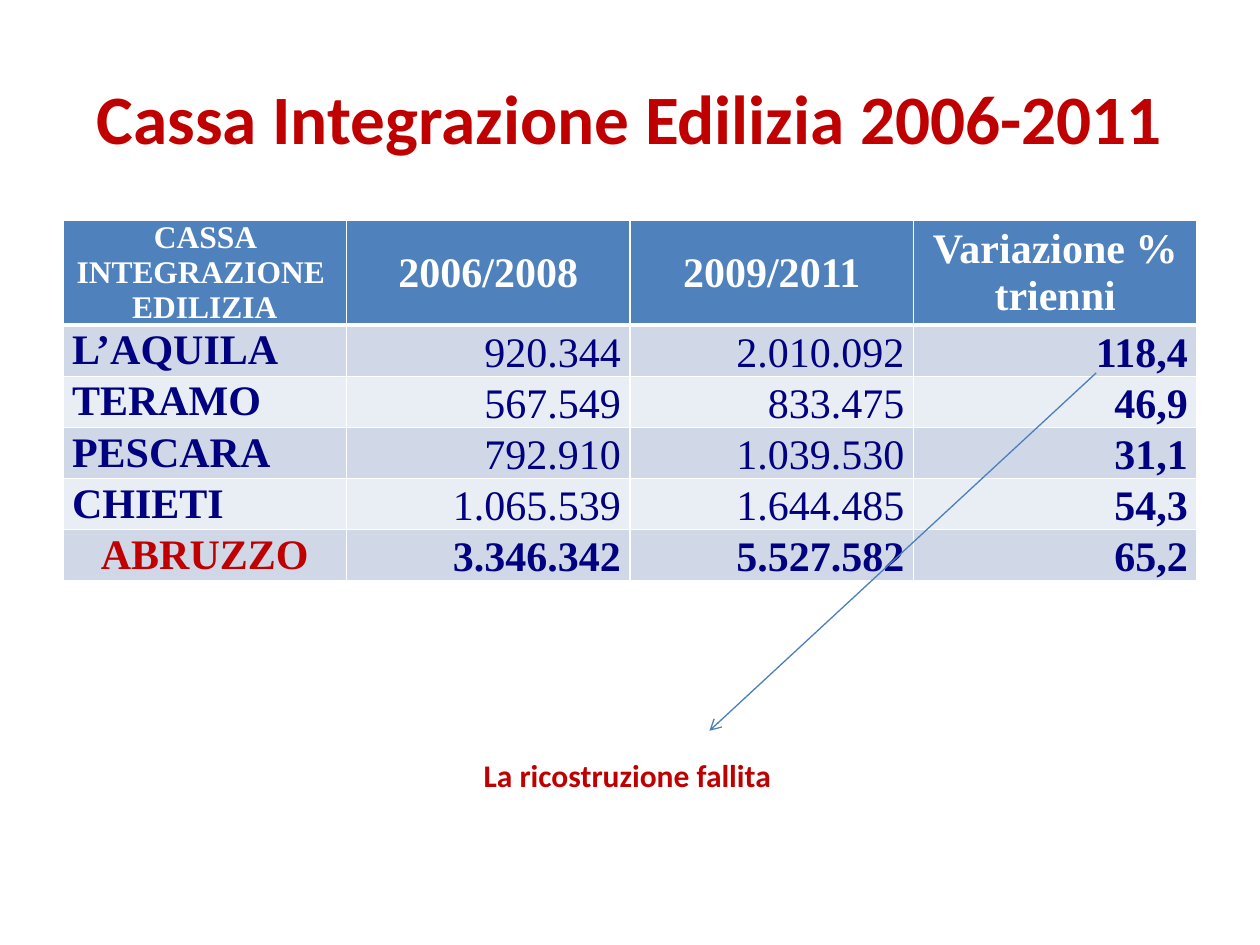
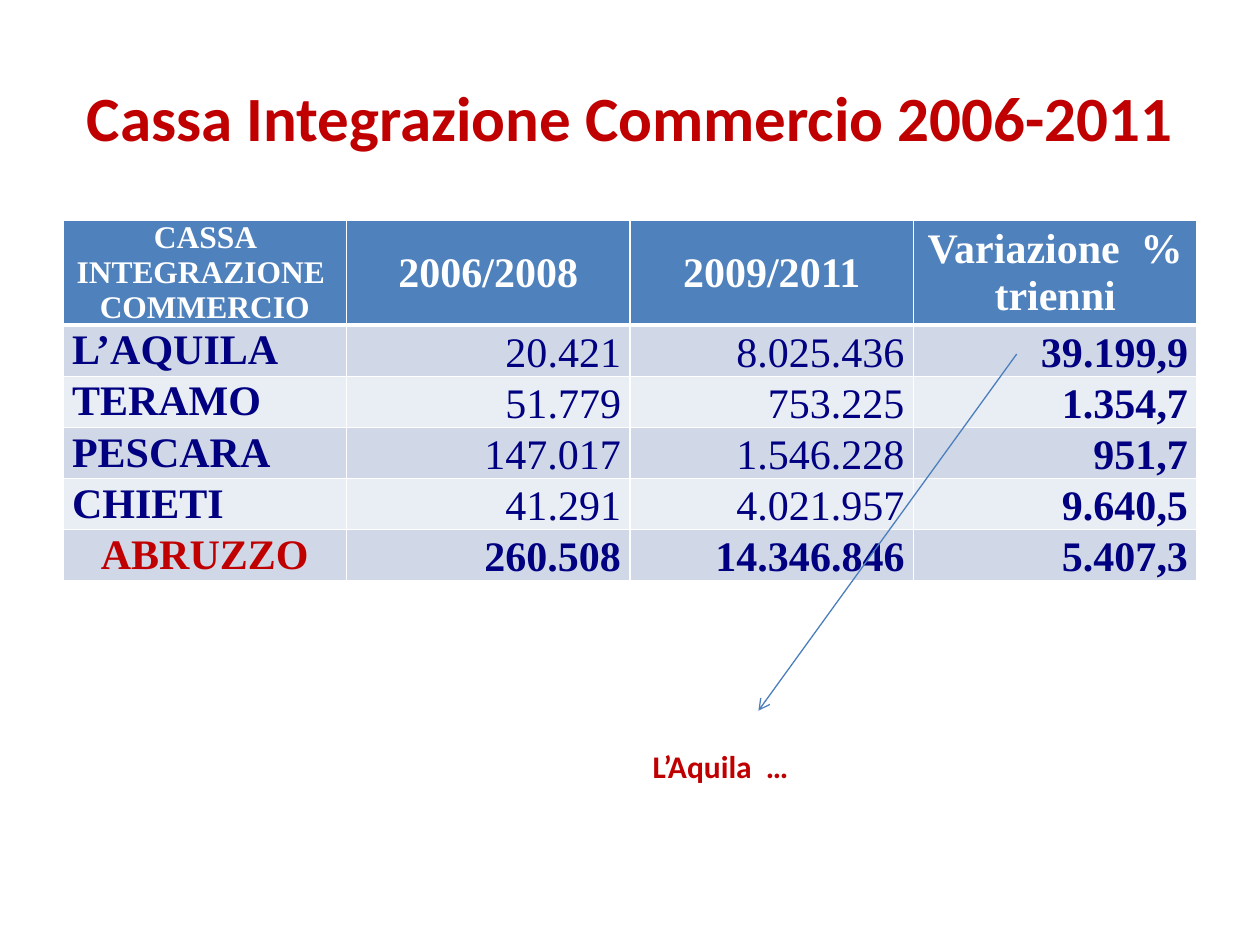
from lxml import etree
from pptx import Presentation
from pptx.dml.color import RGBColor
from pptx.enum import shapes, text
from pptx.oxml import ns
from pptx.util import Pt

RED = RGBColor(0xC0, 0x00, 0x00)
NAVY = RGBColor(0x00, 0x00, 0x80)
WHITE = RGBColor(0xFF, 0xFF, 0xFF)
HEAD = RGBColor(0x4F, 0x81, 0xBD)
BANDS = RGBColor(0xD0, 0xD8, 0xE8), RGBColor(0xE9, 0xED, 0xF4)
LINE = RGBColor(0x4B, 0x7E, 0xBC)
SANS, SERIF = "Calibri", "Times New Roman"

# Content; places are in points
AREAS = ["L’AQUILA", "TERAMO", "PESCARA", "CHIETI", "ABRUZZO"]
SLIDES = [
    {"title": "Cassa Integrazione Edilizia 2006-2011", "size": 39.6,
     "head": ["CASSA INTEGRAZIONE \nEDILIZIA", "2006/2008", "2009/2011",
              "Variazione % trienni"],
     "data": [("920.344", "2.010.092", "118,4"),
              ("567.549", "833.475", "46,9"),
              ("792.910", "1.039.530", "31,1"),
              ("1.065.539", "1.644.485", "54,3"),
              ("3.346.342", "5.527.582", "65,2")],
     "arrow": (626.4, 213.1, 405.4, 417.6),
     "note": "La ricostruzione fallita", "box": (269.3, 428.4, 300.2, 29)},
    {"title": "Cassa Integrazione Commercio 2006-2011", "size": 36,
     "head": ["CASSA INTEGRAZIONE \nCOMMERCIO", "2006/2008", "2009/2011",
              "Variazione  %\ntrienni"],
     "data": [("20.421", "8.025.436", "39.199,9"),
              ("51.779", "753.225", "1.354,7"),
              ("147.017", "1.546.228", "951,7"),
              ("41.291", "4.021.957", "9.640,5"),
              ("260.508", "14.346.846", "5.407,3")],
     "arrow": (581, 202.3, 433.4, 406.1),
     "note": "L’Aquila  …", "box": (365.8, 423.4, 238.3, 29)},
]

# Shared layout
TITLE = (36, 21.6, 648, 90)
LEFT, TOP, COL = 36, 126, 162
HIGH, ROW = 59.2, 29.2
ALIGN, ANCHOR = text.PP_ALIGN, text.MSO_ANCHOR


def pts(vals):
    return [Pt(v) for v in vals]


def style(frame, color, size, name=SANS, bold=True, align=ALIGN.LEFT):
    form = {"name": name, "size": Pt(size), "bold": bold}
    for para in frame.paragraphs:
        para.alignment = align
        for key, val in form.items():
            setattr(para.font, key, val)
        para.font.color.rgb = color


def edge(cell, top, base):
    """Draw white borders, with their own widths above and below."""
    props = cell._tc.get_or_add_tcPr()
    sides = {"lnL": 1, "lnR": 1, "lnT": top, "lnB": base}
    for spot, (tag, wide) in enumerate(sides.items()):
        line = etree.Element(ns.qn("a:" + tag), w=str(Pt(wide)))
        fill = etree.SubElement(line, ns.qn("a:solidFill"))
        etree.SubElement(fill, ns.qn("a:srgbClr"), val=str(WHITE))
        props.insert(spot, line)


def look(row, col):
    """Give the text format, anchor and fill of a cell."""
    if row == 0:
        form = {"color": WHITE, "size": 24 if col else 18, "align": ALIGN.CENTER}
        return form, ANCHOR.MIDDLE, HEAD
    last = row == len(AREAS)
    band = BANDS[(row - 1) % 2]
    if col == 0:
        form = {"color": RED if last else NAVY, "size": 24,
                "align": ALIGN.CENTER if last else ALIGN.LEFT}
        return form, ANCHOR.MIDDLE, band
    form = {"color": NAVY, "size": 24, "bold": last or col == 3,
            "align": ALIGN.RIGHT}
    return form, ANCHOR.BOTTOM, band


def grid(slide, rows):
    many, wide = len(rows), len(rows[0])
    area = pts((LEFT, TOP, COL * wide, HIGH + ROW * (many - 1)))
    table = slide.shapes.add_table(many, wide, *area).table
    for col in table.columns:
        col.width = Pt(COL)
    for r, vals in enumerate(rows):
        table.rows[r].height = Pt(ROW if r else HIGH)
        for c, val in enumerate(vals):
            cell = table.cell(r, c)
            form, anchor, fill = look(r, c)
            cell.text = val
            style(cell.text_frame, name=SERIF, **form)
            pads = {"margin_left": Pt(5.2), "margin_right": Pt(5.2),
                    "margin_top": 0, "margin_bottom": 0,
                    "vertical_anchor": anchor}
            for key, pad in pads.items():
                setattr(cell, key, pad)
            cell.fill.solid()
            cell.fill.fore_color.rgb = fill
            edge(cell, 3 if r == 1 else 1, 3 if r == 0 else 1)


def arrow(slide, ends):
    link = slide.shapes.add_connector(shapes.MSO_CONNECTOR.STRAIGHT, *pts(ends))
    link.line.color.rgb = LINE
    link.line.width = Pt(0.75)
    etree.SubElement(link.line._get_or_add_ln(), ns.qn("a:tailEnd"), type="arrow")
    etree.SubElement(link._element.spPr, ns.qn("a:effectLst"))


def build(deck, page):
    slide = deck.slides.add_slide(deck.slide_layouts[5])

    # Title
    title = slide.shapes.title
    title.left, title.top, title.width, title.height = pts(TITLE)
    title.text = page["title"]
    title.text_frame.vertical_anchor = ANCHOR.MIDDLE
    title.text_frame.auto_size = text.MSO_AUTO_SIZE.NONE
    style(title.text_frame, RED, page["size"], align=ALIGN.CENTER)

    # Table
    body = [(area, *vals) for area, vals in zip(AREAS, page["data"])]
    grid(slide, [page["head"], *body])

    # Arrow and remark
    arrow(slide, page["arrow"])
    note = slide.shapes.add_textbox(*pts(page["box"])).text_frame
    note.word_wrap = True
    note.auto_size = text.MSO_AUTO_SIZE.SHAPE_TO_FIT_TEXT
    note.text = page["note"]
    style(note, RED, 18)


def main():
    deck = Presentation()
    deck.slide_width, deck.slide_height = pts((720, 540))
    for page in SLIDES:
        build(deck, page)
    deck.save("out.pptx")


if __name__ == "__main__":
    main()
